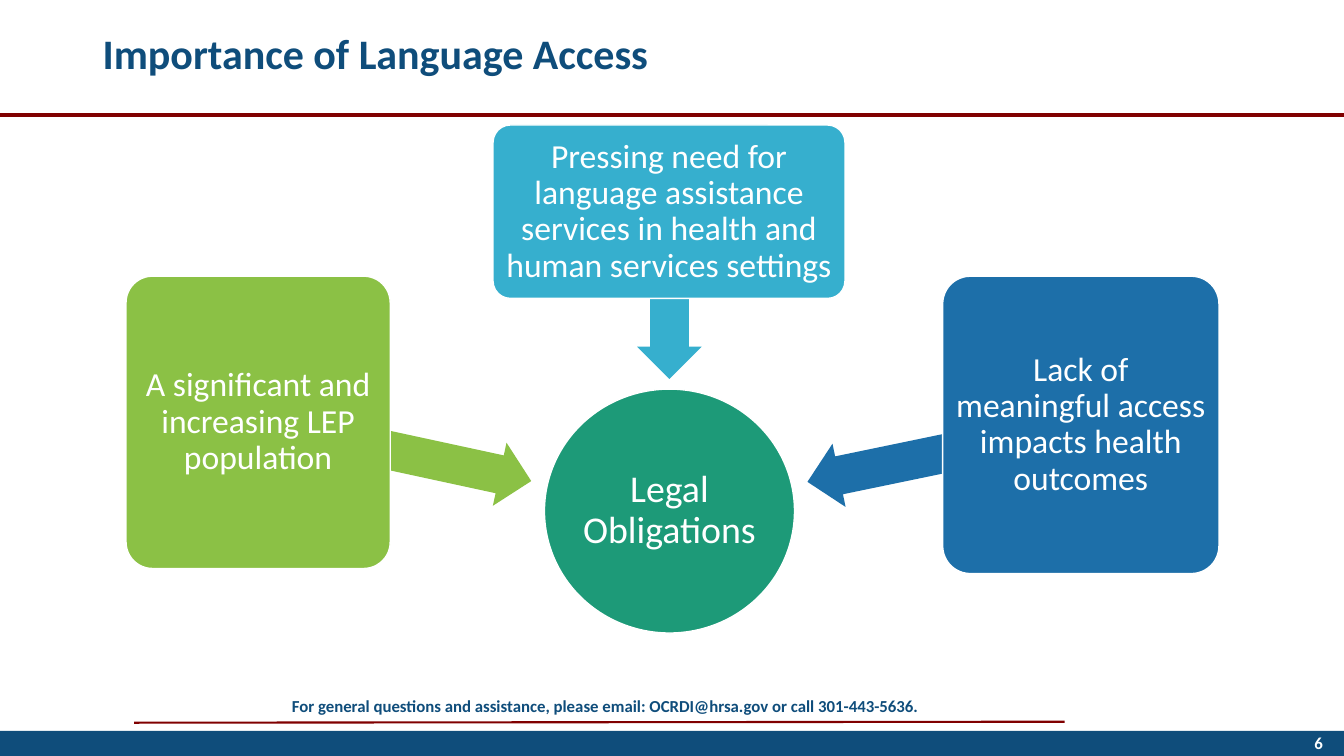
from pptx import Presentation, util as u
from pptx.dml.color import RGBColor
from pptx.enum import shapes, text
from pptx.oxml.ns import qn
from lxml import etree

PX = 9144  # 100 px to the inch
NAVY = RGBColor(0x0F, 0x4D, 0x7B)
MAROON = RGBColor(0x80, 0x00, 0x00)
WHITE = RGBColor(0xFF, 0xFF, 0xFF)
TEAL = RGBColor(0x1D, 0x9A, 0x78)
GREEN = RGBColor(0x8B, 0xC1, 0x45)
CYAN = RGBColor(0x36, 0xAF, 0xCE)
BLUE = RGBColor(0x1D, 0x6F, 0xA9)
SHAPE = shapes.MSO_SHAPE
ALIGN = text.PP_ALIGN
ANCHOR = text.MSO_ANCHOR


class Deck:
    font = "Calibri"

    def __init__(self, width, height):
        self.prs = Presentation()
        self.prs.slide_width = u.Emu(width * PX)
        self.prs.slide_height = u.Emu(height * PX)
        self.s = self.prs.slides.add_slide(self.prs.slide_layouts[6])

    def emu(self, *lengths):
        return [u.Emu(n * PX) for n in lengths]

    def add_words(self, tf, words, size, color, bold=False, align=ALIGN.CENTER,
                  anchor=ANCHOR.MIDDLE, spacing=None):
        tf.word_wrap = True
        tf.vertical_anchor = anchor
        p = tf.paragraphs[0]
        p.alignment = align
        if spacing:
            p.line_spacing = spacing
        r = p.add_run()
        r.text = words
        r.font.name = self.font
        r.font.size = u.Pt(size)
        r.font.bold = bold
        r.font.color.rgb = color

    def label(self, box, words, size, color, **style):
        tf = self.s.shapes.add_textbox(*self.emu(*box)).text_frame
        self.add_words(tf, words, size, color, bold=True, **style)

    def shape(self, kind, box, fill, adj=(), rotation=0, outline=None):
        sp = self.s.shapes.add_shape(kind, *self.emu(*box))
        sp.shadow.inherit = False
        sp.rotation = rotation
        for i, value in enumerate(adj):
            sp.adjustments[i] = value
        sp.fill.solid()
        sp.fill.fore_color.rgb = fill
        if outline:
            sp.line.color.rgb = outline
            sp.line.width = u.Pt(1)
        else:
            sp.line.fill.background()
        return sp

    def node(self, kind, box, fill, words, size, inset, adj=()):
        tf = self.shape(kind, box, fill, adj, outline=WHITE).text_frame
        tf.margin_left = tf.margin_right = u.Emu(inset * PX)
        tf.margin_top = tf.margin_bottom = u.Emu(inset * PX)
        self.add_words(tf, words, size, WHITE, spacing=0.9)

    def rule(self, ends, width):
        c = self.s.shapes.add_connector(shapes.MSO_CONNECTOR.STRAIGHT, *self.emu(*ends))
        c.line.color.rgb = MAROON
        c.line.width = u.Pt(width)
        etree.SubElement(c._element.spPr, qn("a:effectLst"))


def main():
    d = Deck(1333, 750)

    # Footer and header furniture
    d.rule((133, 717, 1056, 716), 1.5)
    d.shape(SHAPE.RECTANGLE, (0, 725, 1333, 25), NAVY)
    d.label((167, 685, 867, 30),
            "For general questions and assistance, please email: "
            "OCRDI@hrsa.gov or call 301-443-5636.",
            12, NAVY, anchor=ANCHOR.TOP)
    d.rule((0, 114, 1333, 114), 3)

    # Title and page number
    d.label((92, -17, 1150, 145), "Importance of Language Access", 30, NAVY,
            align=ALIGN.LEFT, spacing=0.9)
    d.label((1022, 717, 300, 40), "6", 12, WHITE, align=ALIGN.RIGHT)

    # Hub
    d.node(SHAPE.OVAL, (540, 386, 248, 242), TEAL, "Legal Obligations", 27, 2)

    # Reasons, each with an arrow to the hub
    reasons = [
        (GREEN, (253, 416, 277, 64), 192.2, (125, 274, 262, 290),
         "A significant and increasing LEP population"),
        (CYAN, (581, 261, 166, 64), 270, (489, 124, 349, 172),
         "Pressing need for language assistance services in health "
         "and human services settings"),
        (BLUE, (798, 418, 277, 64), 348.3, (935, 274, 274, 295),
         "Lack of meaningful access impacts health outcomes"),
    ]
    for color, arrow, rotation, box, words in reasons:
        d.shape(SHAPE.LEFT_ARROW, arrow, color, (0.6, 0.5), rotation)
        d.node(SHAPE.ROUNDED_RECTANGLE, box, color, words, 24, 5, (0.1,))

    d.prs.save("out.pptx")


if __name__ == "__main__":
    main()
